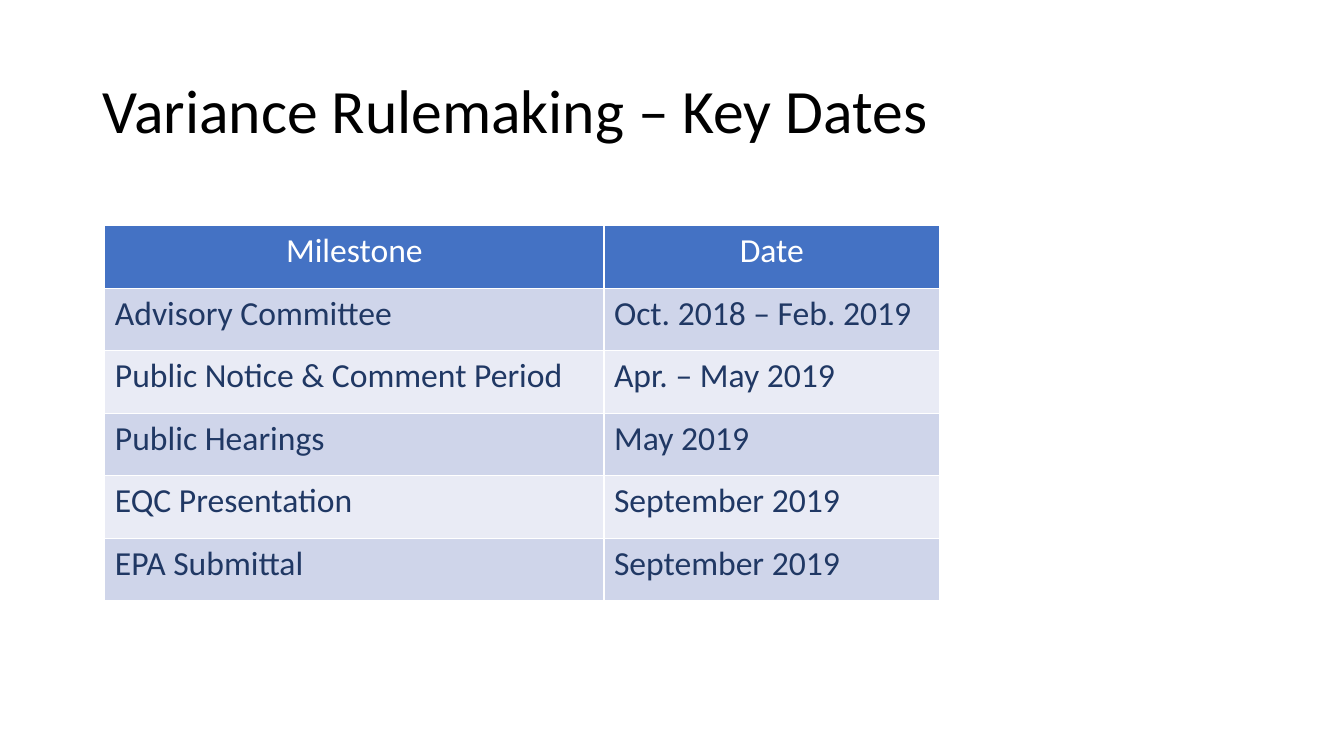
from lxml.etree import SubElement
from pptx import Presentation
from pptx.dml.color import RGBColor
from pptx.enum.text import MSO_ANCHOR, PP_ALIGN
from pptx.oxml.ns import qn
from pptx.util import Inches, Pt

FONT = "Calibri"
WHITE = "FFFFFF"
HEADER_FILL = "4472C4"
BAND_FILLS = ("CFD5EA", "E9EBF5")
MILESTONE_TEXT = "203864"

COLUMN_WIDTHS = (4.95, 3.33)
ROW_HEIGHT = 0.62
KEY_DATES = (
    ("Milestone", "Date"),
    ("Advisory Committee", "Oct. 2018 – Feb. 2019"),
    ("Public Notice & Comment Period", "Apr. – May 2019"),
    ("Public Hearings", "May 2019"),
    ("EQC Presentation", "September 2019"),
    ("EPA Submittal", "September 2019"),
)


def rgb(color):
    return RGBColor.from_string(color)


def write(text_frame, text, size, color, align=PP_ALIGN.LEFT):
    text_frame.text = text
    paragraph = text_frame.paragraphs[0]
    paragraph.alignment = align
    font = paragraph.runs[0].font
    font.name, font.size, font.bold = FONT, Pt(size), False
    font.color.rgb = rgb(color)
    return paragraph


def add_title(slide, text):
    title = slide.shapes.add_textbox(
        Inches(0.92), Inches(0.4), Inches(11.5), Inches(1.45))
    title.text_frame.word_wrap = True
    title.text_frame.vertical_anchor = MSO_ANCHOR.MIDDLE
    write(title.text_frame, text, 44, "000000").line_spacing = 0.9


def add_borders(cell, color, width):
    """Draw all four cell edges; call before filling, as the schema orders them so."""
    properties = cell._tc.get_or_add_tcPr()
    for side in ("lnL", "lnR", "lnT", "lnB"):
        edge = SubElement(properties, qn(f"a:{side}"), w=str(Pt(width)))
        fill = SubElement(edge, qn("a:solidFill"))
        SubElement(fill, qn("a:srgbClr"), val=color)


def add_dates_table(slide, rows):
    table = slide.shapes.add_table(
        len(rows), len(COLUMN_WIDTHS), Inches(1.04), Inches(2.24),
        Inches(sum(COLUMN_WIDTHS)), Inches(ROW_HEIGHT * len(rows))).table
    for column, width in zip(table.columns, COLUMN_WIDTHS):
        column.width = Inches(width)
    for index, texts in enumerate(rows):
        table.rows[index].height = Inches(ROW_HEIGHT)
        if index == 0:
            fill, color, align = HEADER_FILL, WHITE, PP_ALIGN.CENTER
        else:
            fill = BAND_FILLS[(index - 1) % 2]
            color, align = MILESTONE_TEXT, PP_ALIGN.LEFT
        for cell, text in zip(table.rows[index].cells, texts):
            add_borders(cell, WHITE, 1)
            cell.fill.solid()
            cell.fill.fore_color.rgb = rgb(fill)
            write(cell.text_frame, text, 24, color, align)


def main():
    deck = Presentation()
    deck.slide_width, deck.slide_height = Inches(13.33), Inches(7.5)
    slide = deck.slides.add_slide(deck.slide_layouts[6])
    add_title(slide, "Variance Rulemaking – Key Dates")
    add_dates_table(slide, KEY_DATES)
    deck.save("out.pptx")


if __name__ == "__main__":
    main()
